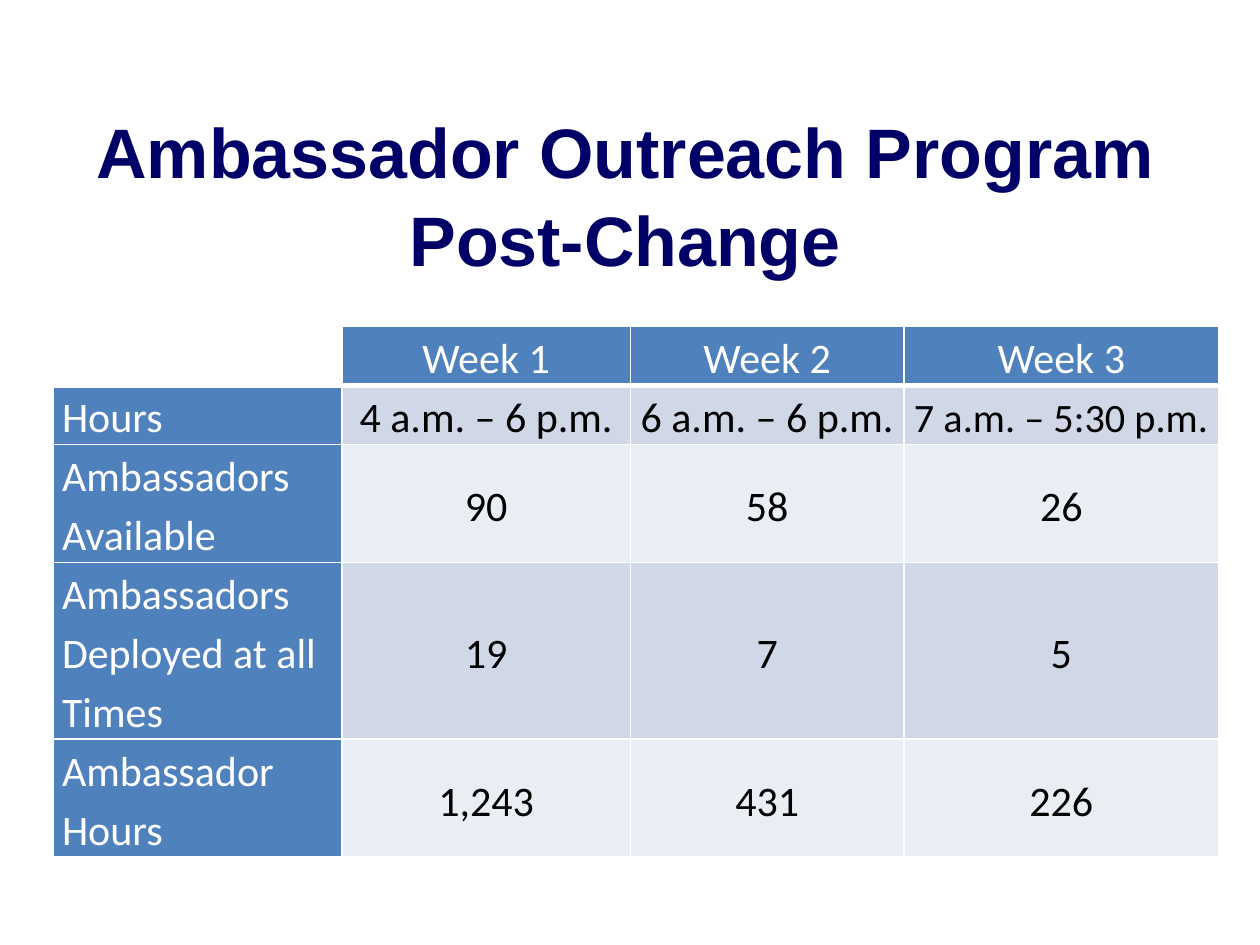
from pptx import Presentation
from pptx import util as u
from pptx.dml.color import RGBColor
from pptx.enum import text
from pptx.oxml import parse_xml
from pptx.oxml.ns import nsdecls

BLUE, WHITE, BLACK, NAVY = "4F81BD", "FFFFFF", "000000", "000066"
BANDS = ("D0D8E8", "E9EDF4")


def colour(value):
    return RGBColor.from_string(value)


def add_borders(cell, bottom_width):
    properties = cell._tc.get_or_add_tcPr()
    sides = (("lnL", 1), ("lnR", 1), ("lnT", 1), ("lnB", bottom_width))
    for position, (side, width) in enumerate(sides):
        line = parse_xml(
            f'<a:{side} {nsdecls("a")} w="{u.Pt(width)}"><a:solidFill>'
            f'<a:srgbClr val="{WHITE}"/></a:solidFill></a:{side}>')
        properties.insert(position, line)


deck = Presentation()
deck.slide_width, deck.slide_height = u.Cm(25.4), u.Cm(19.05)
page = deck.slides.add_slide(deck.slide_layouts[5])

# Title
title = page.shapes.title
title.left, title.top = u.Cm(-0.2), u.Cm(1.9)
title.width, title.height = u.Cm(25.6), u.Cm(2.1)
frame = title.text_frame
frame.text = "Ambassador Outreach Program\nPost-Change"
frame.word_wrap = True
frame.auto_size = text.MSO_AUTO_SIZE.NONE
frame.vertical_anchor = text.MSO_ANCHOR.TOP
frame.margin_top = u.Cm(0.29)
for para in frame.paragraphs:
    para.alignment = text.PP_ALIGN.CENTER
    for span in para.runs:
        span.font.name, span.font.size, span.font.bold = "Arial", u.Pt(40), True
        span.font.color.rgb = colour(NAVY)
frame.paragraphs[1].space_before = u.Pt(2)

# Table
rows = [
    ("", "Week 1", "Week 2", "Week 3"),
    ("Hours", "4 a.m. – 6 p.m.", "6 a.m. – 6 p.m.", "7 a.m. – 5:30 p.m."),
    ("Ambassadors Available", "90", "58", "26"),
    ("Ambassadors Deployed at all Times", "19", "7", "5"),
    ("Ambassador Hours", "1,243", "431", "226"),
]
widths = (5.82, 5.82, 5.51, 6.35)
heights = (1.18, 1.18, 2.38, 3.56, 2.36)
table = page.shapes.add_table(
    len(rows), len(widths), u.Cm(1.07), u.Cm(6.58),
    u.Cm(sum(widths)), u.Cm(sum(heights))).table
for column, width in zip(table.columns, widths):
    column.width = u.Cm(width)
for row, height in zip(table.rows, heights):
    row.height = u.Cm(height)

# Cells: blue headings on the top and left, banded values
for r, words in enumerate(rows):
    for c, word in enumerate(words):
        cell = table.cell(r, c)
        heading = r == 0 or c == 0
        cell.margin_left = cell.margin_right = u.Cm(0.18)
        cell.margin_top = cell.margin_bottom = 0
        if word:
            cell.fill.solid()
            cell.fill.fore_color.rgb = colour(BLUE if heading else BANDS[(r - 1) % 2])
        else:
            cell.fill.background()
        add_borders(cell, 3 if r == 0 else 1)
        if not heading:
            cell.vertical_anchor = text.MSO_ANCHOR.MIDDLE
        cell.text_frame.text = word
        para = cell.text_frame.paragraphs[0]
        para.line_spacing = 1.15
        para.alignment = text.PP_ALIGN.CENTER if c else text.PP_ALIGN.LEFT
        for span in para.runs:
            span.font.name, span.font.bold = "Calibri", False
            span.font.size = u.Pt(23 if (r, c) == (1, 3) else 24)
            span.font.color.rgb = colour(WHITE if heading else BLACK)

deck.save("out.pptx")
